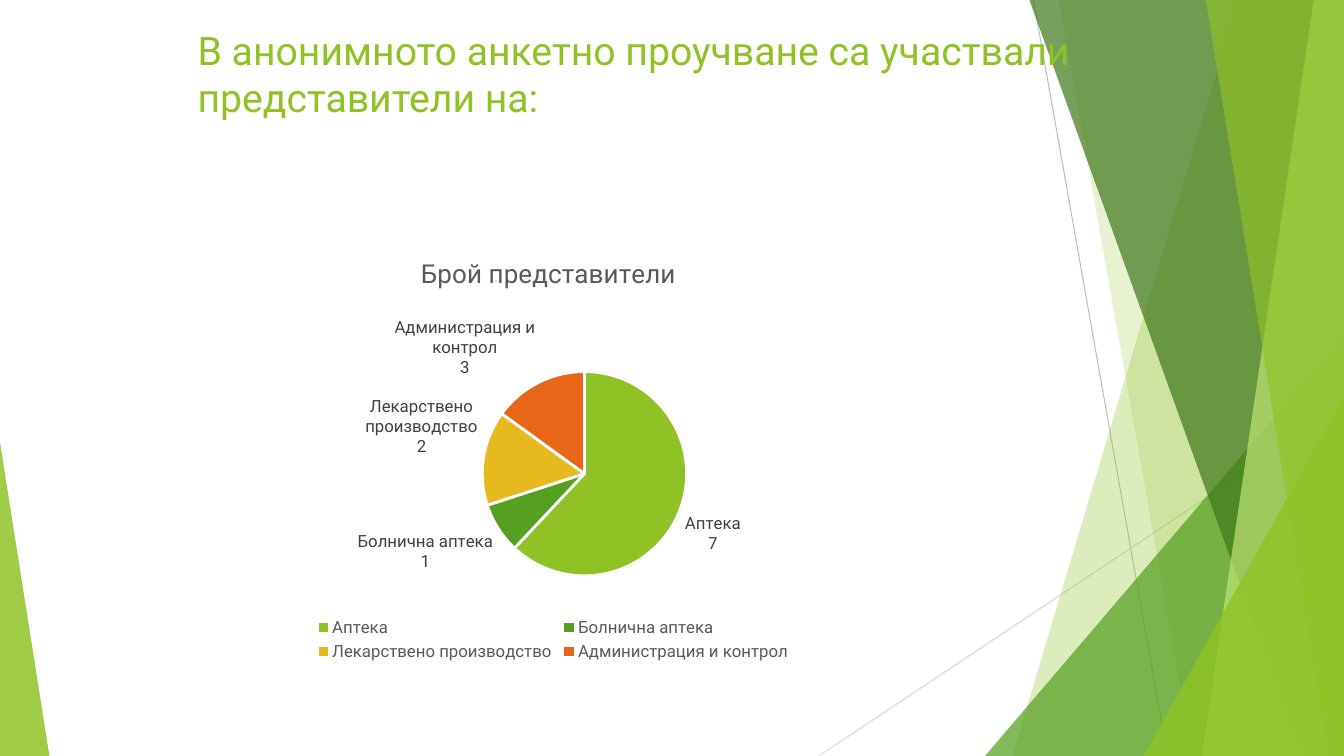
from lxml.etree import SubElement
from pptx import Presentation
from pptx.chart.data import CategoryChartData
from pptx.dml.color import RGBColor
from pptx.enum.chart import XL_CHART_TYPE, XL_LABEL_POSITION, XL_LEGEND_POSITION
from pptx.enum.shapes import MSO_CONNECTOR, MSO_SHAPE
from pptx.enum.text import MSO_ANCHOR, PP_ALIGN
from pptx.oxml import parse_xml
from pptx.oxml.ns import nsdecls, qn
from pptx.util import Inches, Pt

WIDTH, HEIGHT = 13.33, 7.5
FONT = "Roboto"
COLORS = {
    "lime": "90C226", "green": "54A021", "forest": "3F7819", "pale": "C0E474",
    "gold": "E6B91E", "orange": "E76618", "white": "FFFFFF",
    "label": "404040", "caption": "595959", "rule": "BFBFBF", "faint": "D9D9D9",
}
HEADING = "В анонимното анкетно проучване са участвали представители на:"
CHART_TITLE = "Брой представители"
# group, respondents, share in percent, colour
GROUPS = [
    ("Аптека", 7, 62, "lime"),
    ("Болнична аптека", 1, 8, "green"),
    ("Лекарствено производство", 2, 15, "gold"),
    ("Администрация и контрол", 3, 15, "orange"),
]
RULES = [
    ((10.25, 0), (11.58, HEIGHT), "rule"),
    ((WIDTH, 4.03), (8.12, HEIGHT), "faint"),
]
# Bands reach the right edge: x at the top, x at the bottom, colour, opacity.
# Wedges stand on the bottom edge: left, top, width, apex, colour, opacity.
FACETS = [
    ("band", (12.28, 10.04, "lime", 30)),
    ("band", (10.5, 11.83, "lime", 20)),
    ("wedge", (9.77, 3.33, 3.56, 1, "green", 72)),
    ("band", (10.21, 12.91, "forest", 70)),
    ("band", (13.03, 11.92, "pale", 70)),
    ("band", (11.96, 13.18, "lime", 65)),
    ("wedge", (11.34, 3.93, 1.99, 1, "lime", 80)),
    ("wedge", (0, 4.39, 0.49, 0, "lime", 85)),
]
TITLE_BOX = (1.86, 0.21, 10.56, 0.88)
CHART_BOX = (0.74, 2.36, 9.4, 4.24)
# Shares of the chart's size: x, y, w, h
PIE_AREA = (0.43, 0.313, 0.216, 0.478)
LEGEND_AREA = (0.25, 0.88, 0.51, 0.12)


def rgb(name):
    return RGBColor.from_string(COLORS[name])


def style(font, size, color):
    font.color.rgb = rgb(color)
    for attribute, value in {"name": FONT, "size": Pt(size), "bold": False}.items():
        setattr(font, attribute, value)


def paint(facet, color, opacity):
    facet.shadow.inherit = False
    facet.line.fill.background()
    facet.fill.solid()
    facet.fill.fore_color.rgb = rgb(color)
    tint = facet.fill._xPr.find(".//" + qn("a:srgbClr"))
    SubElement(tint, qn("a:alpha"), val=str(opacity * 1000))


def add_band(shapes, top_x, bottom_x, color, opacity):
    outline = shapes.build_freeform(Inches(top_x), 0)
    outline.add_line_segments([
        (Inches(x), Inches(y))
        for x, y in [(WIDTH, 0), (WIDTH, HEIGHT), (bottom_x, HEIGHT)]
    ], close=True)
    paint(outline.convert_to_shape(), color, opacity)


def add_wedge(shapes, left, top, width, apex, color, opacity):
    box = map(Inches, (left, top, width, HEIGHT - top))
    wedge = shapes.add_shape(MSO_SHAPE.ISOSCELES_TRIANGLE, *box)
    wedge.adjustments[0] = apex
    paint(wedge, color, opacity)


def manual_layout(area, inner=False):
    target = '<c:layoutTarget val="inner"/>' if inner else ""
    modes = "".join(f'<c:{side}Mode val="edge"/>' for side in "xy")
    sizes = "".join(f'<c:{side} val="{share}"/>' for side, share in zip("xywh", area))
    return parse_xml(f'<c:layout {nsdecls("c")}><c:manualLayout>{target}{modes}{sizes}'
                     "</c:manualLayout></c:layout>")


def add_backdrop(shapes):
    for start, end, color in RULES:
        rule = shapes.add_connector(MSO_CONNECTOR.STRAIGHT, *map(Inches, start + end))
        rule.line.color.rgb = rgb(color)
        rule.line.width = Pt(0.75)
        SubElement(rule._element.spPr, qn("a:effectLst"))
    adders = {"band": add_band, "wedge": add_wedge}
    for kind, geometry in FACETS:
        adders[kind](shapes, *geometry)


def add_heading(title):
    title.left, title.top, title.width, title.height = map(Inches, TITLE_BOX)
    frame = title.text_frame
    frame.text = HEADING
    frame.word_wrap = True
    frame.vertical_anchor = MSO_ANCHOR.TOP
    frame.paragraphs[0].alignment = PP_ALIGN.LEFT
    style(frame.paragraphs[0].runs[0].font, 28, "lime")
    title.element.getparent().append(title.element)


def add_survey_pie(shapes):
    survey = CategoryChartData()
    survey.categories = [group for group, *_ in GROUPS]
    survey.add_series("Series 1", [share for _, _, share, _ in GROUPS])
    chart = shapes.add_chart(XL_CHART_TYPE.PIE, *map(Inches, CHART_BOX), survey).chart
    style(chart.font, 12, "label")

    caption = chart.chart_title.text_frame
    caption.text = CHART_TITLE
    style(caption.paragraphs[0].runs[0].font, 18.6, "caption")

    chart.has_legend = True
    legend = chart.legend
    legend.position = XL_LEGEND_POSITION.BOTTOM
    legend.include_in_layout = False
    style(legend.font, 12, "caption")
    legend._element.find(qn("c:legendPos")).addnext(manual_layout(LEGEND_AREA))

    plot = chart.plots[0]
    plot.vary_by_categories = True
    area = plot._element.getparent()
    for automatic in area.findall(qn("c:layout")):
        area.remove(automatic)
    area.insert(0, manual_layout(PIE_AREA, inner=True))

    for index, (group, count, _, color) in enumerate(GROUPS):
        point = plot.series[0].points[index]
        point.format.fill.solid()
        point.format.fill.fore_color.rgb = rgb(color)
        point.format.line.color.rgb = rgb("white")
        point.format.line.width = Pt(2)
        label = point.data_label
        label.text_frame.text = f"{group}\n{count}"
        for paragraph in label.text_frame.paragraphs:
            style(paragraph.runs[0].font, 12, "label")
        label.position = XL_LABEL_POSITION.OUTSIDE_END


def main():
    deck = Presentation()
    deck.slide_width, deck.slide_height = Inches(WIDTH), Inches(HEIGHT)
    slide = deck.slides.add_slide(deck.slide_layouts[5])
    add_backdrop(slide.shapes)
    add_heading(slide.shapes.title)
    add_survey_pie(slide.shapes)
    deck.save("out.pptx")


if __name__ == "__main__":
    main()
